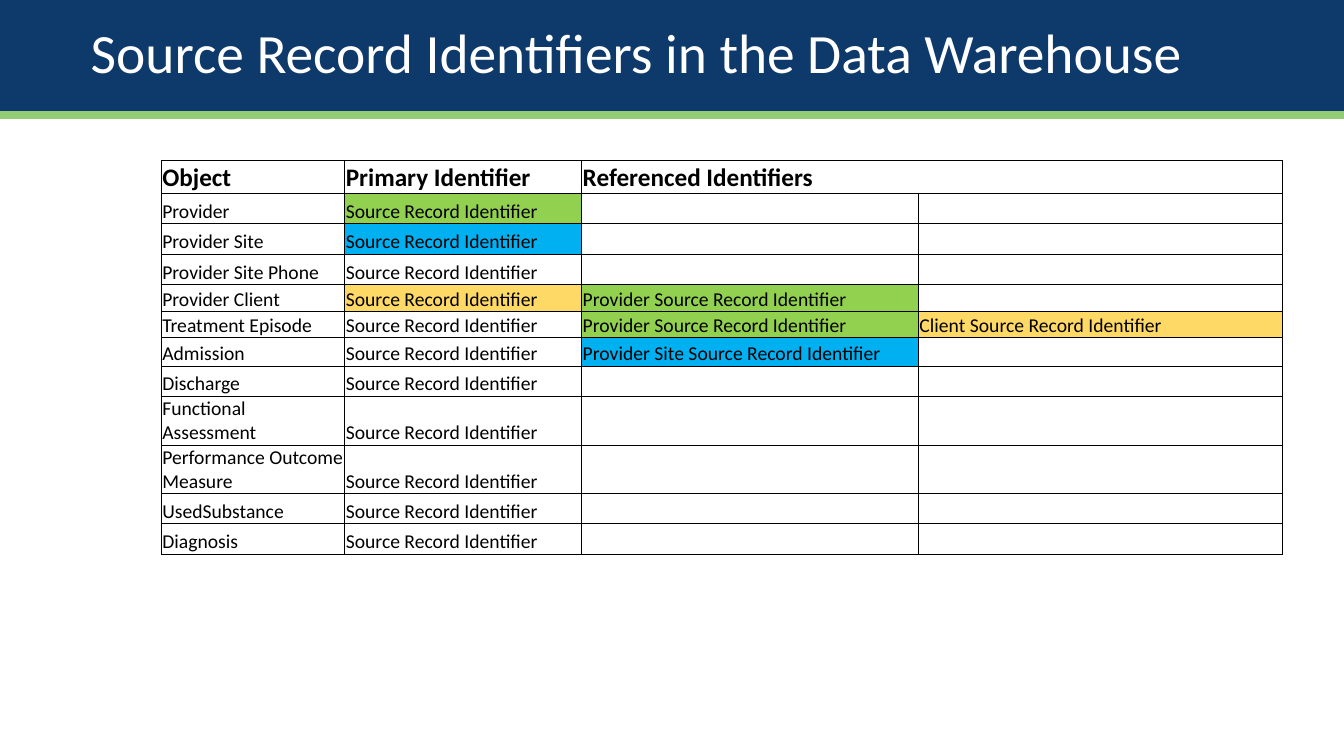
import pptx
import pptx.util
import pptx.dml.color
import pptx.enum.shapes
import pptx.enum.text
import pptx.oxml
import pptx.oxml.ns

Inches, Pt = pptx.util.Inches, pptx.util.Pt

# Content
TITLE = "Source Record Identifiers in the Data Warehouse"
HEADS = ["Object", "Primary Identifier", "Referenced Identifiers", ""]
KEY = "Source Record Identifier"
GREEN, BLUE, GOLD = "92D050", "00B0F0", "FFD966"

# Object, fill of its primary identifier, row height, referenced identifiers
ROWS = [
    ("Provider", GREEN, 0.3, []),
    ("Provider Site", BLUE, 0.3, []),
    ("Provider Site Phone", None, 0.3, []),
    ("Provider Client", GOLD, 0.27, ["Provider"]),
    ("Treatment Episode", None, 0.26, ["Provider", "Client"]),
    ("Admission", None, 0.28, ["Provider Site"]),
    ("Discharge", None, 0.3, []),
    ("Functional Assessment", None, 0.48, []),
    ("Performance Outcome Measure", None, 0.48, []),
    ("UsedSubstance", None, 0.3, []),
    ("Diagnosis", None, 0.3, []),
]
REFS = {"Provider": GREEN, "Provider Site": BLUE, "Client": GOLD}
WIDTHS = [1.82, 2.35, 3.34, 3.61]
HEAD_H = 0.33
BANDS = [("94CC75", 0.09, 1.09), ("0E396B", 0, 1.1)]


def color(code):
    return pptx.dml.color.RGBColor.from_string(code)


def style(para, size, code, bold=False):
    font = para.font
    font.name, font.size, font.bold = "Calibri", Pt(size), bold
    font.color.rgb = color(code)


def border(cell):
    props = cell._tc.get_or_add_tcPr()
    for side in "LRTB":
        props.append(pptx.oxml.parse_xml(
            f'<a:ln{side} {pptx.oxml.ns.nsdecls("a")} w="{Pt(0.5)}"><a:solidFill>'
            f'<a:srgbClr val="000000"/></a:solidFill></a:ln{side}>'))


def put(cell, text, size, fill=None, bold=False):
    cell.margin_left = cell.margin_right = cell.margin_top = Inches(0.01)
    cell.margin_bottom = 0
    cell.vertical_anchor = pptx.enum.text.MSO_ANCHOR.BOTTOM
    border(cell)
    if fill:
        cell.fill.solid()
        cell.fill.fore_color.rgb = color(fill)
    else:
        cell.fill.background()
    para = cell.text_frame.paragraphs[0]
    if text:
        para.text = text
    else:  # an empty cell takes its line height from the end mark
        para._p.append(pptx.oxml.parse_xml(
            f'<a:endParaRPr {pptx.oxml.ns.nsdecls("a")} sz="{size * 100}"/>'))
    style(para, size, "000000", bold)


deck = pptx.Presentation()
deck.slide_width, deck.slide_height = Inches(13.33), Inches(7.5)
slide = deck.slides.add_slide(deck.slide_layouts[5])

# Header bands, placed behind the title
for i, (code, top, high) in enumerate(BANDS):
    band = slide.shapes.add_shape(pptx.enum.shapes.MSO_SHAPE.RECTANGLE,
                                  0, Inches(top), deck.slide_width, Inches(high))
    band.shadow.inherit = False
    band.fill.solid()
    band.fill.fore_color.rgb = color(code)
    band.line.fill.background()
    slide.shapes._spTree.insert(2 + i, band._element)

# Title
title = slide.shapes.title
title.left, title.top = Inches(0.8), Inches(0.2)
title.width, title.height = Inches(11.77), Inches(1.06)
frame = title.text_frame
frame.text = TITLE
frame.word_wrap = True
frame.auto_size = pptx.enum.text.MSO_AUTO_SIZE.NONE
frame.vertical_anchor = pptx.enum.text.MSO_ANCHOR.TOP
para = frame.paragraphs[0]
para.alignment = pptx.enum.text.PP_ALIGN.LEFT
para.line_spacing = 0.9
style(para, 39.6, "FFFFFF")

# Table grid
highs = [HEAD_H] + [row[2] for row in ROWS]
table = slide.shapes.add_table(len(highs), len(WIDTHS), Inches(1.6), Inches(1.59),
                               Inches(sum(WIDTHS)), Inches(sum(highs))).table
table.first_row = table.horz_banding = False
for col, wide in zip(table.columns, WIDTHS):
    col.width = Inches(wide)
for row, high in zip(table.rows, highs):
    row.height = Inches(high)

# Table cells
for c, head in enumerate(HEADS):
    put(table.cell(0, c), head, 18, bold=True)
table.cell(0, 2).merge(table.cell(0, 3))
for r, (name, fill, high, refs) in enumerate(ROWS, 1):
    cells = [(name, None), (KEY, fill)]
    cells += [(f"{ref} {KEY}", REFS[ref]) for ref in refs]
    cells += [("", None)] * (len(WIDTHS) - len(cells))
    for c, (text, shade) in enumerate(cells):
        put(table.cell(r, c), text, 14, shade)

deck.save("out.pptx")
